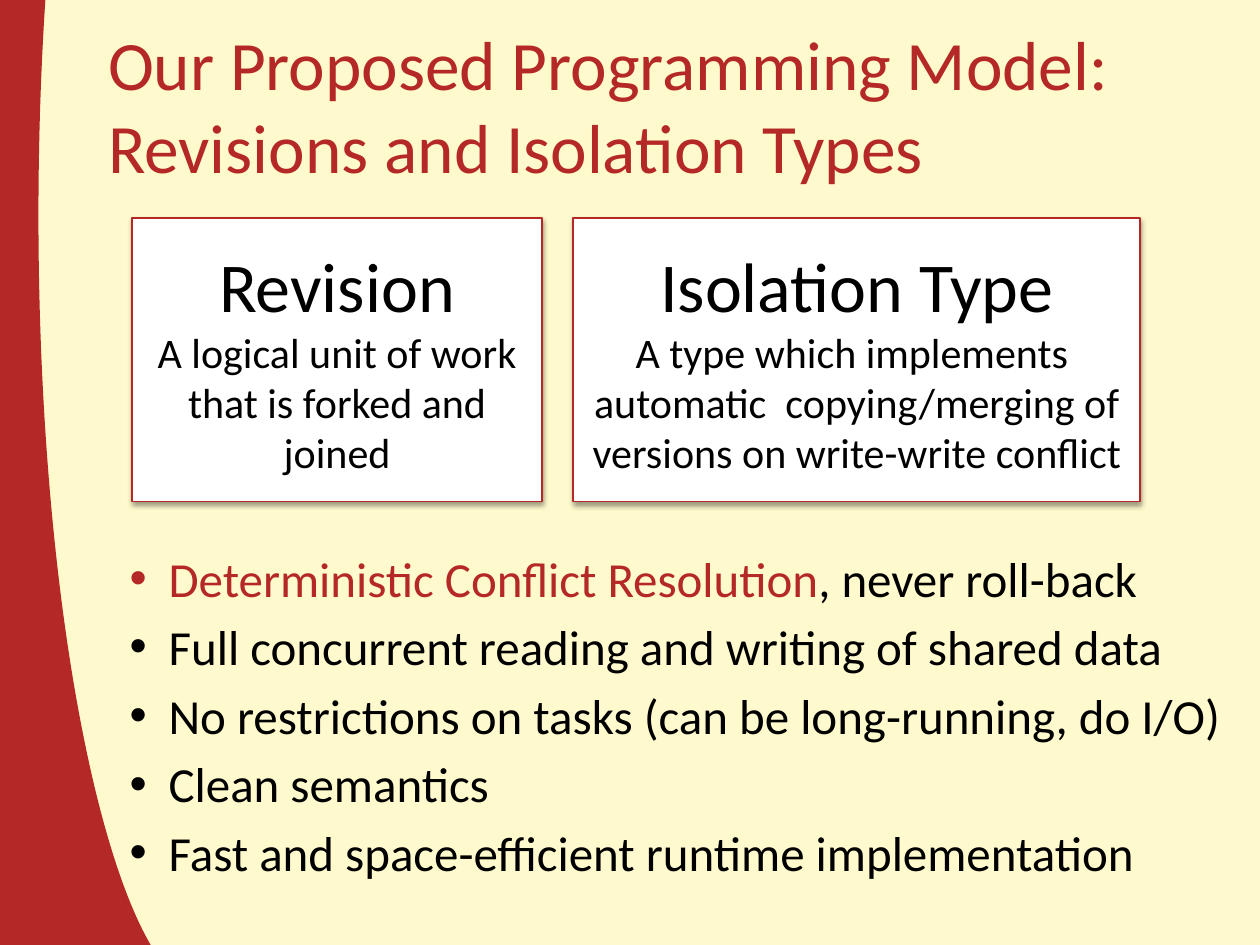
"""Build the slide on revisions and isolation types."""
from dataclasses import dataclass

from lxml.etree import SubElement
from pptx import Presentation
from pptx.dml.color import RGBColor
from pptx.enum.shapes import MSO_SHAPE
from pptx.enum.text import MSO_ANCHOR, PP_ALIGN
from pptx.oxml.ns import qn
from pptx.util import Inches, Pt

TITLE = ["Our Proposed Programming Model:", "Revisions and Isolation Types"]
CARDS = [
    ("Revision", "A logical unit of work that is forked and joined", 3.25),
    (
        "Isolation Type",
        "A type which implements  automatic  copying/merging of versions on write-write conflict",
        4.5,
    ),
]
BULLETS = [
    ("Deterministic Conflict Resolution", ", never roll-back"),
    ("", "Full concurrent reading and writing of shared data"),
    ("", "No restrictions on tasks (can be long-running, do I/O)"),
    ("", "Clean semantics"),
    ("", "Fast and space-efficient runtime implementation"),
]
CARD_LEFT, CARD_TOP, CARD_HEIGHT, CARD_GAP = 1.05, 1.73, 2.25, 0.25
ARC_DEGREES = (296.11, 92.23)


@dataclass(frozen=True)
class Theme:
    font: str = "Calibri"
    cream: RGBColor = RGBColor(0xFF, 0xFA, 0xCD)
    red: RGBColor = RGBColor(0xB4, 0x28, 0x28)
    black: RGBColor = RGBColor(0, 0, 0)
    white: RGBColor = RGBColor(0xFF, 0xFF, 0xFF)
    title: float = 39.6
    heading: float = 40
    detail: float = 24
    bullet: float = 28


THEME = Theme()


def set_font(font, size, color):
    font.name = THEME.font
    font.size = Pt(size)
    font.color.rgb = color


def add_text_frame(page, left, top, width, height):
    box = page.shapes.add_textbox(Inches(left), Inches(top), Inches(width), Inches(height))
    box.text_frame.word_wrap = True
    return box.text_frame


def add_band(page):
    band = page.shapes.add_shape(
        MSO_SHAPE.ARC, Inches(-0.25), Inches(-4.83), Inches(3.08), Inches(13.08)
    )
    for index, degrees in enumerate(ARC_DEGREES):
        band.adjustments[index] = degrees * 0.6
    band.element.spPr.find(qn("a:xfrm")).set("flipH", "1")
    band.shadow.inherit = False
    band.fill.background()
    band.line.color.rgb = THEME.red
    band.line.width = Pt(80)


def add_title(page):
    frame = add_text_frame(page, 0.76, 0.24, 8.78, 1.17)
    frame.vertical_anchor = MSO_ANCHOR.MIDDLE
    para = frame.paragraphs[0]
    set_font(para.font, THEME.title, THEME.red)
    for index, line in enumerate(TITLE):
        if index:
            para.add_line_break()
        para.add_run().text = line


def add_shadow(card):
    card.shadow.inherit = False
    effects = card.element.spPr.find(qn("a:effectLst"))
    shadow = SubElement(
        effects, qn("a:outerShdw"),
        blurRad=str(Pt(3.1)), dist=str(Pt(1.6)), dir="5400000", rotWithShape="0",
    )
    color = SubElement(shadow, qn("a:srgbClr"), val=str(THEME.black))
    SubElement(color, qn("a:alpha"), val="38000")


def add_card(page, heading, detail, left, width):
    card = page.shapes.add_shape(
        MSO_SHAPE.RECTANGLE, Inches(left), Inches(CARD_TOP), Inches(width), Inches(CARD_HEIGHT)
    )
    card.fill.solid()
    card.fill.fore_color.rgb = THEME.white
    card.line.color.rgb = THEME.red
    card.line.width = Pt(1)
    add_shadow(card)
    frame = card.text_frame
    frame.word_wrap = True
    frame.vertical_anchor = MSO_ANCHOR.MIDDLE
    for index, (text, size) in enumerate([(heading, THEME.heading), (detail, THEME.detail)]):
        para = frame.add_paragraph() if index else frame.paragraphs[0]
        para.text = text
        para.alignment = PP_ALIGN.CENTER
        set_font(para.font, size, THEME.black)


def add_bullets(page):
    frame = add_text_frame(page, 0.55, 4.3, 9.45, 3.18)
    for index, (accent, plain) in enumerate(BULLETS):
        para = frame.add_paragraph() if index else frame.paragraphs[0]
        para.space_before = Pt(THEME.bullet * 0.2)
        properties = para._p.get_or_add_pPr()
        properties.set("marL", str(Inches(0.69)))
        properties.set("indent", str(Inches(-0.31)))
        SubElement(properties, qn("a:buFont"), typeface="Arial")
        SubElement(properties, qn("a:buChar"), char="•")
        for text, color in ((accent, THEME.red), (plain, THEME.black)):
            if text:
                span = para.add_run()
                span.text = text
                set_font(span.font, THEME.bullet, color)


def main():
    deck = Presentation()
    deck.slide_width, deck.slide_height = Inches(10), Inches(7.5)
    page = deck.slides.add_slide(deck.slide_layouts[6])
    page.background.fill.solid()
    page.background.fill.fore_color.rgb = THEME.cream
    add_band(page)
    add_title(page)
    add_bullets(page)
    left = CARD_LEFT
    for heading, detail, width in CARDS:
        add_card(page, heading, detail, left, width)
        left += width + CARD_GAP
    deck.save("out.pptx")


if __name__ == "__main__":
    main()
